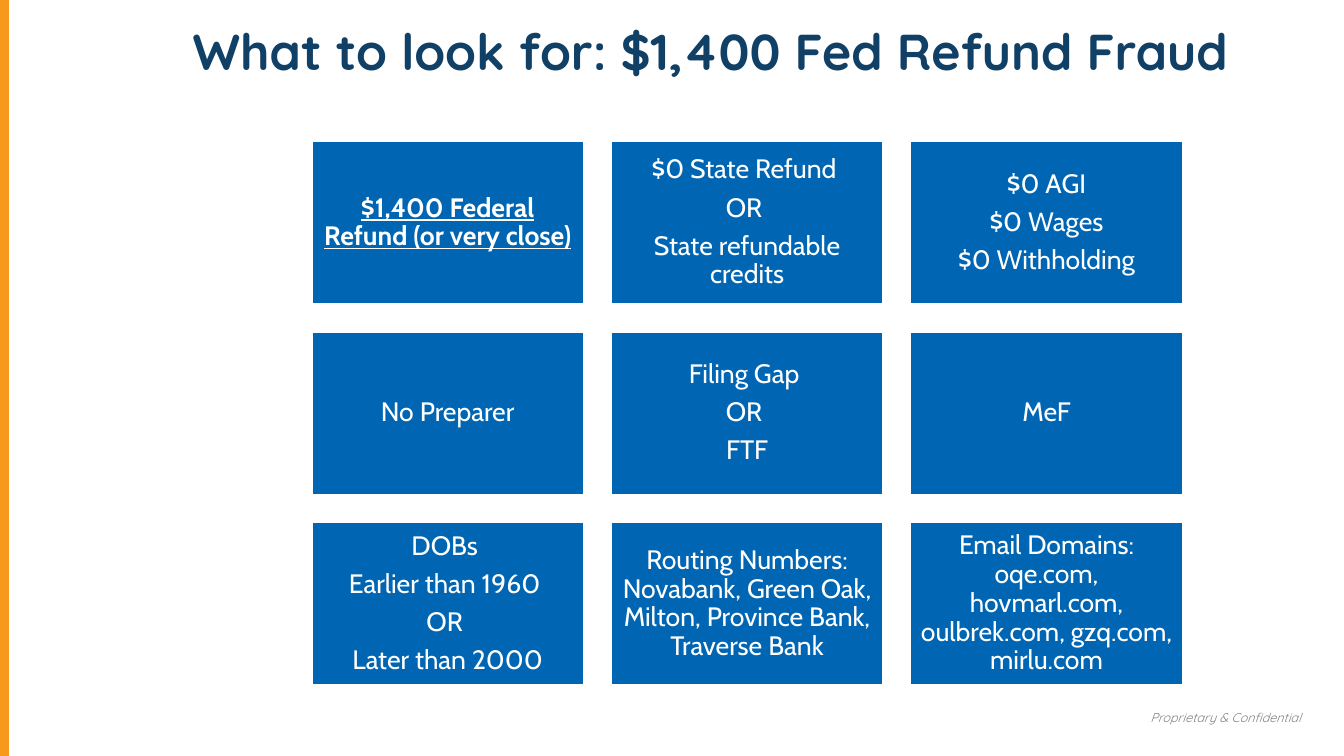
from lxml import etree
from pptx import Presentation
from pptx.dml.color import RGBColor
from pptx.enum.shapes import MSO_CONNECTOR, MSO_SHAPE
from pptx.enum.text import MSO_ANCHOR, PP_ALIGN
from pptx.oxml.ns import qn
from pptx.util import Inches, Pt

COLORS = {
    "navy": "114066",
    "blue": "0066B3",
    "orange": "F8991D",
    "gray": "808285",
    "white": "FFFFFF",
}

INDICATORS = [
    [
        ["$1,400 Federal Refund (or very close)"],
        ["$0 State Refund ", "OR ", "State refundable credits"],
        ["$0 AGI", "$0 Wages", "$0 Withholding"],
    ],
    [
        ["No Preparer"],
        ["Filing Gap ", "OR ", "FTF"],
        ["MeF"],
    ],
    [
        ["DOBs ", "Earlier than 1960 ", "OR ", "Later than 2000"],
        ["Routing Numbers: Novabank, Green Oak, Milton, Province Bank, Traverse Bank"],
        ["Email Domains: oqe.com, hovmarl.com, oulbrek.com, gzq.com, mirlu.com"],
    ],
]
GRID_LEFT, GRID_TOP = 3.09, 1.4
CARD_WIDTH, CARD_HEIGHT = 2.7, 1.62
COLUMN_STEP, ROW_STEP = 2.97, 1.89


def color(name):
    return RGBColor.from_string(COLORS[name])


def add_run(paragraph, text, font, size, color_name):
    run = paragraph.add_run()
    run.text = text
    run.font.name = font
    run.font.size = Pt(size)
    run.font.color.rgb = color(color_name)
    return run


prs = Presentation()
prs.slide_width = Inches(13.33)
prs.slide_height = Inches(7.5)
slide = prs.slides.add_slide(prs.slide_layouts[5])

# Slide frame: side stripe and confidentiality note
stripe = slide.shapes.add_connector(
    MSO_CONNECTOR.STRAIGHT, Inches(0.03), Inches(0), Inches(0.03), Inches(7.5)
)
stripe.line.color.rgb = color("orange")
stripe.line.width = Pt(8)
etree.SubElement(stripe._element.spPr, qn("a:effectLst"))

footer = slide.shapes.add_textbox(
    Inches(10.97), Inches(6.91), Inches(2.03), Inches(0.48)
).text_frame
footer.word_wrap = True
footer.vertical_anchor = MSO_ANCHOR.BOTTOM
footer.margin_bottom = Inches(0.2)
footer.paragraphs[0].alignment = PP_ALIGN.RIGHT
note = add_run(footer.paragraphs[0], "Proprietary & Confidential", "Quicksand", 9, "gray")
note.font.italic = True

# Title
title = slide.shapes.title
title.left, title.top = Inches(1.81), Inches(0.15)
title.width, title.height = Inches(11.19), Inches(1)
title.text_frame.vertical_anchor = MSO_ANCHOR.TOP
heading = title.text_frame.paragraphs[0]
heading.alignment = PP_ALIGN.LEFT
heading_run = add_run(
    heading, "What to look for: $1,400 Fed Refund Fraud", "Quicksand", 36, "navy"
)
heading_run.font.bold = True

# Grid of fraud indicators
for row, indicators in enumerate(INDICATORS):
    for column, lines in enumerate(indicators):
        card = slide.shapes.add_shape(
            MSO_SHAPE.RECTANGLE,
            Inches(GRID_LEFT + column * COLUMN_STEP),
            Inches(GRID_TOP + row * ROW_STEP),
            Inches(CARD_WIDTH),
            Inches(CARD_HEIGHT),
        )
        card.shadow.inherit = False
        card.fill.solid()
        card.fill.fore_color.rgb = color("blue")
        card.line.color.rgb = color("white")
        card.line.width = Pt(1.5)

        frame = card.text_frame
        frame.word_wrap = True
        frame.vertical_anchor = MSO_ANCHOR.MIDDLE
        frame.margin_left = frame.margin_right = Inches(0.08)
        frame.margin_top = frame.margin_bottom = Inches(0.08)
        for index, line in enumerate(lines):
            paragraph = frame.add_paragraph() if index else frame.paragraphs[0]
            paragraph.alignment = PP_ALIGN.CENTER
            paragraph.line_spacing = 0.9
            paragraph.space_after = Pt(6.65)
            run = add_run(paragraph, line, "Cabin", 19, "white")
            if row == column == 0:
                run.font.bold = True
                run.font.underline = True

prs.save("out.pptx")
